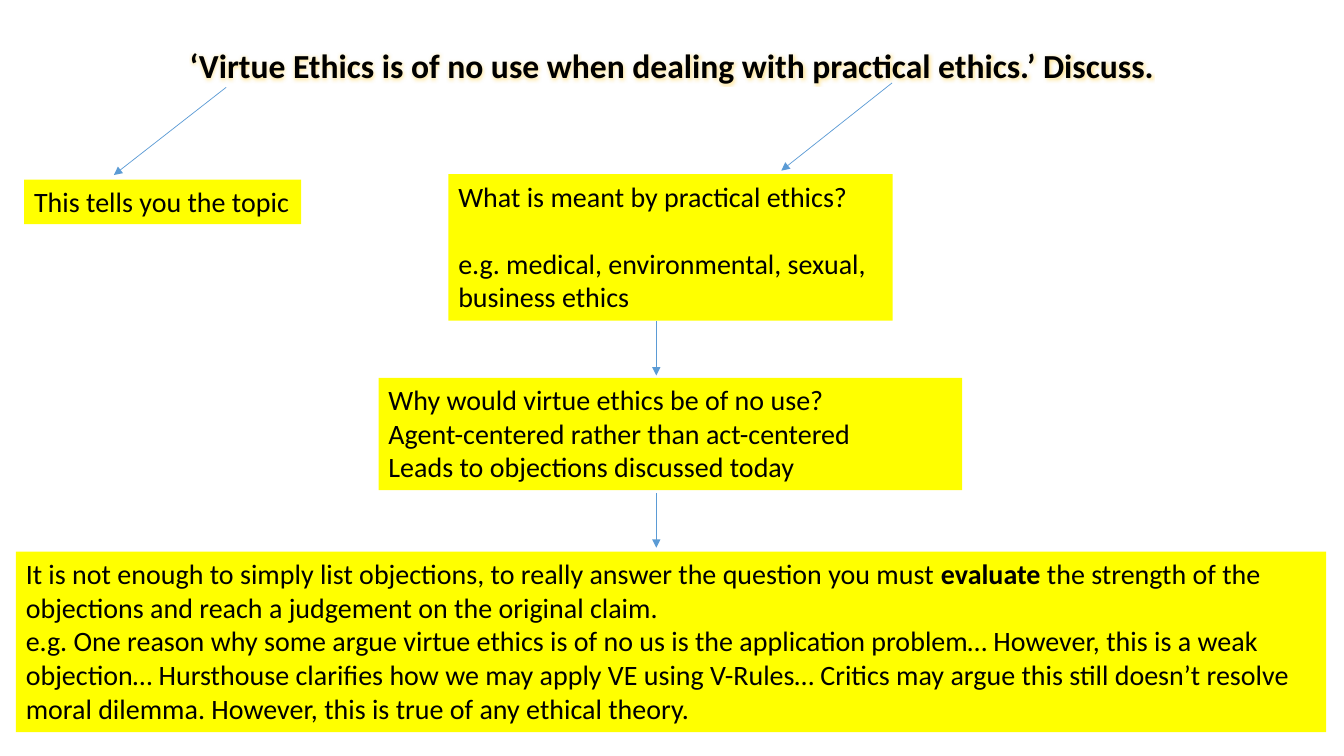
import dataclasses

import lxml.etree
import pptx
import pptx.dml.color
import pptx.enum.shapes
import pptx.enum.text
import pptx.oxml
import pptx.oxml.ns
import pptx.util
from pptx.util import Cm


@dataclasses.dataclass
class Theme:
    font: str = "Calibri"
    title: int = 24
    body: int = 20
    line: float = 0.5
    ink: str = "000000"
    box: str = "FFFF00"
    arrow: str = "5B9BD5"
    glow: str = "FFC000"


theme = Theme()
rgb = pptx.dml.color.RGBColor.from_string
qn = pptx.oxml.ns.qn


def add_text(s, paragraphs, left, top, width, height, size=theme.body, bold=False,
             fill=None, align=None, wrap=True, gap=0):
    sp = s.shapes.add_textbox(Cm(left), Cm(top), Cm(width), Cm(height))
    tf = sp.text_frame
    tf.word_wrap = wrap
    if fill:
        sp.fill.solid()
        sp.fill.fore_color.rgb = rgb(fill)
        tf.auto_size = pptx.enum.text.MSO_AUTO_SIZE.SHAPE_TO_FIT_TEXT
    for i, runs in enumerate(paragraphs):
        p = tf.paragraphs[0] if i == 0 else tf.add_paragraph()
        p.alignment = align
        if i:
            p.space_before = pptx.util.Pt(gap)
        for j, text in enumerate(runs):
            r = p.add_run()
            r.text = text
            r.font.name = theme.font
            r.font.size = pptx.util.Pt(size)
            r.font.bold = bold or j % 2 == 1
            r.font.color.rgb = rgb(theme.ink)
    return sp


prs = pptx.Presentation()
prs.slide_width, prs.slide_height = Cm(33.87), Cm(19.05)
s = prs.slides.add_slide(prs.slide_layouts[6])

title = add_text(
    s, [["‘Virtue Ethics is of no use when dealing with practical ethics.’ Discuss."]],
    2.33, 1.12, 29.21, 16.51, size=theme.title, bold=True,
    align=pptx.enum.text.PP_ALIGN.CENTER)
p = title.text_frame.paragraphs[0]
p.line_spacing = 0.9
p.space_before = pptx.util.Pt(10)
glow = pptx.oxml.parse_xml(
    '<a:effectLst xmlns:a="http://schemas.openxmlformats.org/drawingml/2006/main">'
    f'<a:glow rad="63500"><a:srgbClr val="{theme.glow}"><a:alpha val="40000"/>'
    '</a:srgbClr></a:glow></a:effectLst>')
p.runs[0].font._element.find(qn("a:solidFill")).addnext(glow)

add_text(s, [["This tells you the topic"]], 0.61, 4.53, 6.98, 1.12,
         fill=theme.box, wrap=False)
add_text(s, [["What is meant by practical ethics?"],
             ["e.g. medical, environmental, sexual, business ethics"]],
         11.3, 4.39, 11.2, 3.69, fill=theme.box, gap=24)
add_text(s, [["Why would virtue ethics be of no use?"],
             ["Agent-centered rather than act-centered"],
             ["Leads to objections discussed today"]],
         9.54, 9.52, 14.71, 2.83, fill=theme.box)
add_text(s, [["It is not enough to simply list objections, to really answer the question "
              "you must ", "evaluate", " the strength of the objections and reach a "
              "judgement on the original claim."],
             ["e.g. One reason why some argue virtue ethics is of no us is the application "
              "problem… However, this is a weak objection… Hursthouse clarifies how we may "
              "apply VE using V-Rules… Critics may argue this still doesn’t resolve moral "
              "dilemma. However, this is true of any ethical theory."]],
         0.4, 13.9, 33.02, 4.55, fill=theme.box)

arrows = [(5.7, 2.2, 2.87, 4.41), (22.48, 2.09, 19.69, 4.3),
          (16.54, 8.09, 16.54, 9.46), (16.54, 12.43, 16.54, 13.8)]
for ends in arrows:
    cx = s.shapes.add_connector(pptx.enum.shapes.MSO_CONNECTOR.STRAIGHT, *map(Cm, ends))
    cx.line.color.rgb = rgb(theme.arrow)
    cx.line.width = pptx.util.Pt(theme.line)
    ln = cx.line._get_or_add_ln()
    lxml.etree.SubElement(ln, qn("a:tailEnd"), type="triangle")
    lxml.etree.SubElement(ln.getparent(), qn("a:effectLst"))

prs.save("out.pptx")
